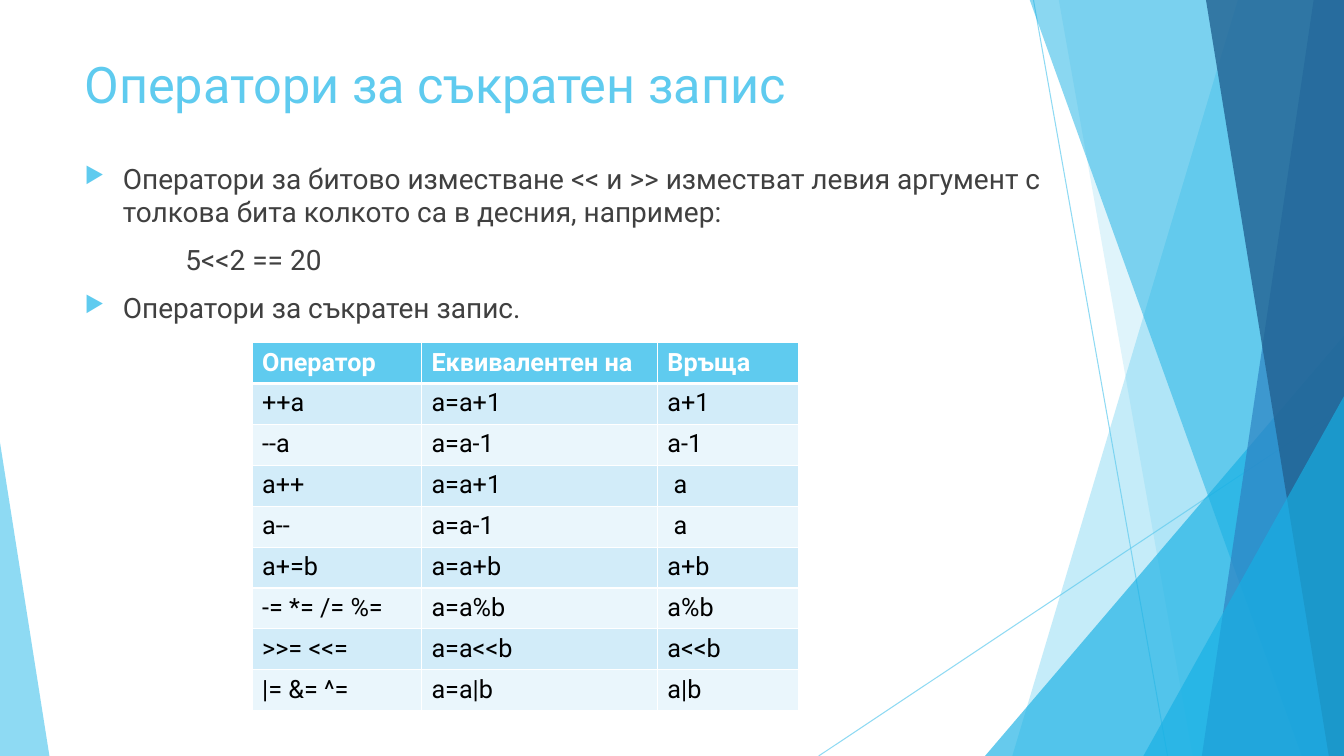
import pptx
import pptx.util
import pptx.dml.color
import pptx.enum.shapes
import pptx.enum.text
import pptx.oxml
import pptx.oxml.ns
import lxml.etree

Inches = pptx.util.Inches
Pt = pptx.util.Pt
RGBColor = pptx.dml.color.RGBColor
qn = pptx.oxml.ns.qn

SKY = RGBColor(0x5F, 0xCB, 0xEF)
CYAN = RGBColor(0x17, 0xB0, 0xE4)
BLUE = RGBColor(0x2E, 0x83, 0xC3)
NAVY = RGBColor(0x22, 0x62, 0x92)
GRAY = RGBColor(0x40, 0x40, 0x40)
BLACK = RGBColor(0, 0, 0)
WHITE = RGBColor(0xFF, 0xFF, 0xFF)
BANDS = [RGBColor(0xD2, 0xEC, 0xF9), RGBColor(0xEA, 0xF6, 0xFC)]

FONT = "Roboto"
WIDE, HIGH, TOP = 13.33, 7.5, -0.01
BULLET = 0.38

LINES = [(10.25, 0, 11.58, HIGH), (WIDE, 4.03, 8.12, HIGH)]
# Upper left x, lower left x, colour, opacity; each runs to the right edge
PANES = [
    (12.28, 10.04, SKY, 36),
    (10.5, 11.83, SKY, 20),
    (10.21, 12.91, CYAN, 50),
    (13.03, 11.92, BLUE, 70),
    (11.96, 13.18, NAVY, 80),
]
# Left, top, width, tip place, colour, opacity; each stands on the lower edge
PEAKS = [
    (9.77, 3.33, 3.56, 1, CYAN, 66),
    (11.34, 3.93, 1.99, 1, CYAN, 66),
    (0, 4.39, 0.49, 0, SKY, 70),
]

TITLE = "Оператори за съкратен запис"
# Text, left indent, whether it has a bullet
BODY = [
    ("Оператори за битово изместване << и >> изместват левия аргумент с "
     "толкова бита колкото са в десния, например:", BULLET, True),
    ("5<<2 == 20", 1, False),
    ("Оператори за съкратен запис.", BULLET, True),
]
COLS = [1.68, 2.34, 1.4]
ROWS = [
    ("Оператор", "Еквивалентен на", "Връща"),
    ("++а", "а=а+1", "а+1"),
    ("--а", "а=а-1", "а-1"),
    ("а++", "а=а+1", " а"),
    ("а--", "а=а-1", " а"),
    ("a+=b", "a=a+b", "a+b"),
    ("-= *= /= %=", "a=a%b", "a%b"),
    (">>= <<=", "a=a<<b", "a<<b"),
    ("|= &= ^=", "a=a|b", "a|b"),
]


def style(thing, values):
    for name, value in values.items():
        setattr(thing, name, value)


def write(para, text, size, color, bold=False):
    run = para.add_run()
    run.text = text
    style(run.font, {"name": FONT, "size": Pt(size), "bold": bold})
    run.font.color.rgb = color


def fade(shape, part):
    for color in shape.element.spPr.iter(qn("a:srgbClr")):
        lxml.etree.SubElement(color, qn("a:alpha"), val=str(part * 1000))


def paint(shape, color, part):
    shape.shadow.inherit = False
    shape.line.fill.background()
    shape.fill.solid()
    shape.fill.fore_color.rgb = color
    fade(shape, part)


def add_line(slide, ends):
    kind = pptx.enum.shapes.MSO_CONNECTOR.STRAIGHT
    line = slide.shapes.add_connector(kind, *[Inches(end) for end in ends])
    line.line.color.rgb = SKY
    line.line.width = Pt(0.75)
    fade(line, 70)
    lxml.etree.SubElement(line.element.spPr, qn("a:effectLst"))


def add_pane(slide, upper, lower, color, part):
    spots = [(upper, TOP), (WIDE, TOP), (WIDE, HIGH), (lower, HIGH)]
    spots = [(Inches(x), Inches(y)) for x, y in spots]
    form = slide.shapes.build_freeform(*spots[0])
    form.add_line_segments(spots[1:], close=True)
    paint(form.convert_to_shape(), color, part)


def add_peak(slide, left, top, width, tip, color, part):
    kind = pptx.enum.shapes.MSO_SHAPE.ISOSCELES_TRIANGLE
    peak = slide.shapes.add_shape(
        kind, Inches(left), Inches(top), Inches(width), Inches(HIGH - top))
    peak.adjustments[0] = tip
    paint(peak, color, part)


def add_text(slide, left, top, width, height):
    box = slide.shapes.add_textbox(
        Inches(left), Inches(top), Inches(width), Inches(height))
    style(box.text_frame, {
        "word_wrap": True,
        "vertical_anchor": pptx.enum.text.MSO_ANCHOR.TOP})
    return box.text_frame


def indent(para, left, marked):
    props = para._p.get_or_add_pPr()
    props.set("marL", str(Inches(left)))
    if marked:
        props.set("indent", str(-Inches(BULLET)))
        tint = lxml.etree.SubElement(props, qn("a:buClr"))
        lxml.etree.SubElement(tint, qn("a:srgbClr"), val=str(SKY))
        lxml.etree.SubElement(props, qn("a:buSzPct"), val="80000")
        lxml.etree.SubElement(props, qn("a:buChar"), char="▶")


def add_body(slide):
    frame = add_text(slide, 0.74, 1.55, 9.92, 5.55)
    for place, (text, left, marked) in enumerate(BODY):
        para = frame.add_paragraph() if place else frame.paragraphs[0]
        para.space_before = Pt(10)
        indent(para, left, marked)
        write(para, text, 20, GRAY)


def edge(cell, side, width):
    props = cell._tc.get_or_add_tcPr()
    line = lxml.etree.SubElement(props, qn("a:ln" + side), w=str(Pt(width)))
    fill = lxml.etree.SubElement(line, qn("a:solidFill"))
    lxml.etree.SubElement(fill, qn("a:srgbClr"), val=str(WHITE))


def add_grid(slide):
    grid = slide.shapes.add_table(
        len(ROWS), len(COLS), Inches(2.5), Inches(3.4),
        Inches(sum(COLS)), Inches(3.65)).table
    for col, width in zip(grid.columns, COLS):
        col.width = Inches(width)
    for row, texts in enumerate(ROWS):
        head = row == 0
        # The rule under the header is thicker
        widths = {"L": 1, "R": 1, "T": 3 if row == 1 else 1,
                  "B": 3 if head else 1}
        for col, text in enumerate(texts):
            cell = grid.cell(row, col)
            for side, width in widths.items():
                edge(cell, side, width)
            cell.fill.solid()
            cell.fill.fore_color.rgb = SKY if head else BANDS[(row - 1) % 2]
            write(cell.text_frame.paragraphs[0], text, 18,
                  WHITE if head else BLACK, head)


def main():
    deck = pptx.Presentation()
    style(deck, {"slide_width": Inches(WIDE), "slide_height": Inches(HIGH)})
    slide = deck.slides.add_slide(deck.slide_layouts[6])

    # Backdrop: the large right peak lies between the second and third panes
    for ends in LINES:
        add_line(slide, ends)
    for pane in PANES[:2]:
        add_pane(slide, *pane)
    add_peak(slide, *PEAKS[0])
    for pane in PANES[2:]:
        add_pane(slide, *pane)
    for peak in PEAKS[1:]:
        add_peak(slide, *peak)

    # Title, bullets and table
    title = add_text(slide, 0.74, 0.48, 9.4, 0.96)
    write(title.paragraphs[0], TITLE, 36, SKY)
    add_body(slide)
    add_grid(slide)

    deck.save("out.pptx")


if __name__ == "__main__":
    main()
